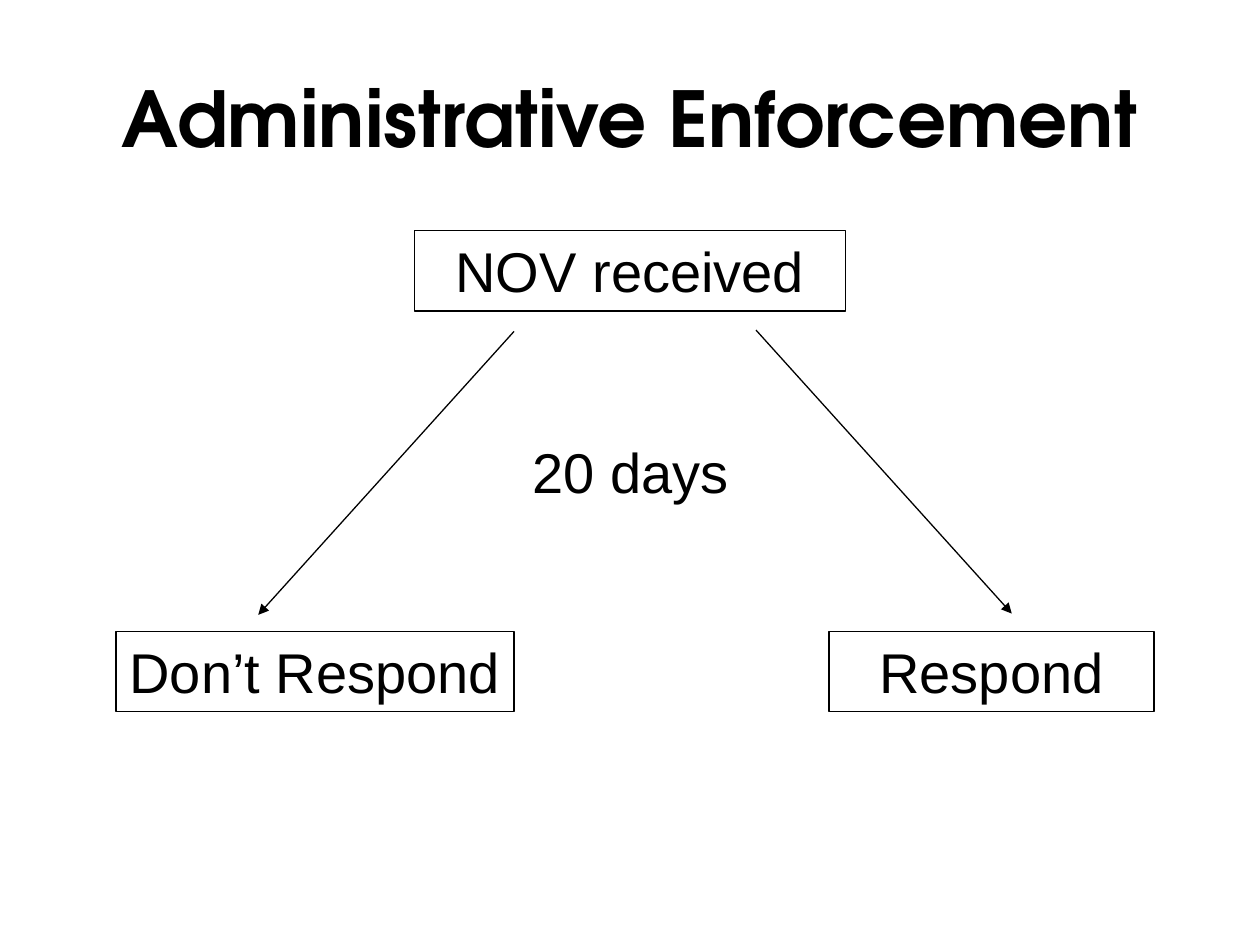
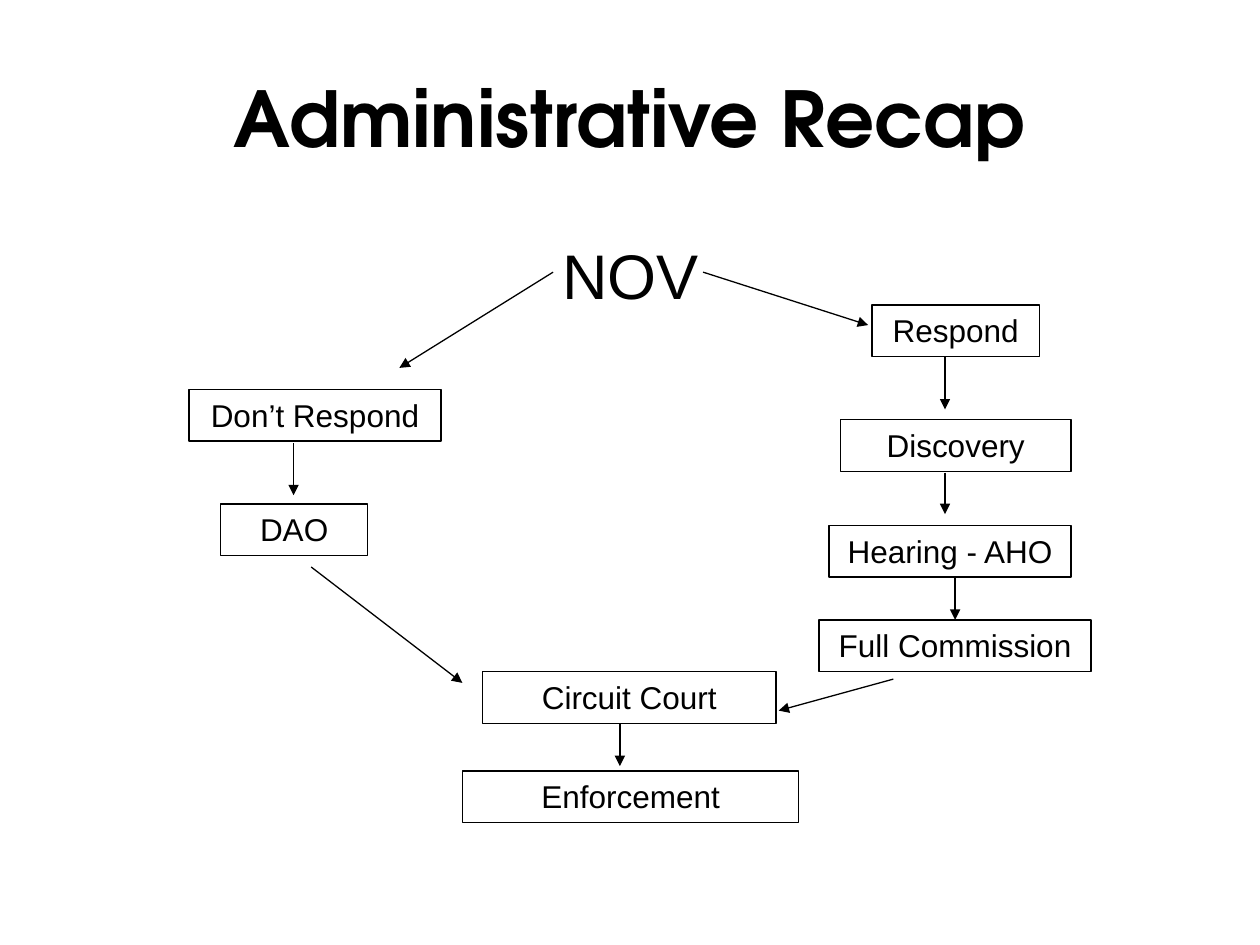
from typing import NamedTuple

from lxml.etree import SubElement
from pptx import Presentation
from pptx.dml.color import RGBColor
from pptx.enum.shapes import MSO_CONNECTOR, MSO_SHAPE
from pptx.enum.text import MSO_ANCHOR as Anchor, MSO_AUTO_SIZE as AutoSize, PP_ALIGN as Align
from pptx.oxml.ns import qn
from pptx.util import Inches, Pt

INK, PAPER = "000000", "FFFFFF"
BODY_FONT, TITLE_FONT = "Arial", "TeX Gyre Adventor"
LINE_WIDTH = 0.75
TITLE_ONLY = 5
TOP_SIDE = 0


class Box(NamedTuple):
    text: str
    left: float
    top: float
    width: float


class Arrow(NamedTuple):
    x1: float
    y1: float
    x2: float
    y2: float
    target: str = ""  # box whose top side the arrow is joined to


class BoxStyle(NamedTuple):
    size: float
    height: float


class Flow(NamedTuple):
    title: str
    style: BoxStyle
    boxes: list[Box]
    label: Box
    label_style: BoxStyle
    arrows: list[Arrow]


LARGE, SMALL = BoxStyle(32, 0.64), BoxStyle(18, 0.41)

FLOWS = [
    Flow(
        "Administrative Enforcement", LARGE,
        [
            Box("NOV received", 3.29, 1.83, 3.42),
            Box("Don’t Respond", 0.92, 5.01, 3.16),
            Box("Respond", 6.58, 5.01, 2.58),
        ],
        Box("20 days", 3.93, 3.42, 2.15), LARGE,
        [Arrow(4.08, 2.63, 2.05, 4.88), Arrow(6, 2.62, 8.03, 4.87)],
    ),
    Flow(
        "Administrative Recap", SMALL,
        [
            # No response
            Box("Don’t Respond", 1.5, 3.09, 2),
            Box("DAO", 1.75, 4, 1.17),
            # Response
            Box("Respond", 6.92, 2.42, 1.33),
            Box("Discovery", 6.67, 3.33, 1.83),
            Box("Hearing - AHO", 6.58, 4.17, 1.92),
            Box("Full Commission", 6.5, 4.92, 2.16),
            # Both branches end in court
            Box("Circuit Court", 3.83, 5.33, 2.33),
            Box("Enforcement", 3.67, 6.12, 2.67),
        ],
        Box("NOV", 4.17, 1.83, 1.67), BoxStyle(36, 0.75),
        [
            Arrow(4.39, 2.16, 3.17, 2.92),
            Arrow(5.58, 2.16, 6.89, 2.58),
            Arrow(2.33, 3.52, 2.33, 3.93),
            Arrow(2.47, 4.5, 3.67, 5.42),
            Arrow(7.5, 2.83, 7.5, 3.25),
            Arrow(7.5, 3.75, 7.5, 4.08),
            Arrow(7.58, 4.58, 7.58, 4.92, "Full Commission"),
            Arrow(7.09, 5.39, 6.18, 5.64),
            Arrow(4.92, 5.74, 4.92, 6.08),
        ],
    ),
]


def rgb(color: str) -> RGBColor:
    return RGBColor.from_string(color)


def write(shape, text: str, **font_format) -> None:
    """Put one centred line of text in a shape."""
    tf = shape.text_frame
    tf.word_wrap = True
    p = tf.paragraphs[0]
    p.alignment = Align.CENTER
    r = p.add_run()
    r.text = text
    for name, value in font_format.items():
        setattr(r.font, name, value)
    r.font.color.rgb = rgb(INK)


def style_line(line) -> None:
    line.color.rgb = rgb(INK)
    line.width = Pt(LINE_WIDTH)


def add_title(s, text: str) -> None:
    title = s.shapes.title
    place = {"left": 0.5, "top": 0.3, "width": 9, "height": 1.25}
    for name, value in place.items():
        setattr(title, name, Inches(value))
    title.text_frame.vertical_anchor = Anchor.MIDDLE
    write(title, text, name=TITLE_FONT, size=Pt(44), bold=True)


def add_box(s, box: Box, style: BoxStyle, framed: bool = True):
    area = [Inches(v) for v in (box.left, box.top, box.width, style.height)]
    if framed:
        sp = s.shapes.add_shape(MSO_SHAPE.RECTANGLE, *area)
        sp.shadow.inherit = False
        sp.fill.background()
        style_line(sp.line)
    else:
        sp = s.shapes.add_textbox(*area)
    sp.text_frame.vertical_anchor = Anchor.TOP
    write(sp, box.text, name=BODY_FONT, size=Pt(style.size))
    sp.text_frame.auto_size = AutoSize.SHAPE_TO_FIT_TEXT
    return sp


def add_arrow(s, arrow: Arrow, boxes: dict) -> None:
    ends = [Inches(v) for v in arrow[:4]]
    line = s.shapes.add_connector(MSO_CONNECTOR.STRAIGHT, *ends)
    if arrow.target:
        line.end_connect(boxes[arrow.target], TOP_SIDE)
    style_line(line.line)
    SubElement(line.line._get_or_add_ln(), qn("a:tailEnd"), type="triangle")
    SubElement(line._element.spPr, qn("a:effectLst"))


def add_flow(prs, flow: Flow) -> None:
    s = prs.slides.add_slide(prs.slide_layouts[TITLE_ONLY])
    s.background.fill.solid()
    s.background.fill.fore_color.rgb = rgb(PAPER)
    add_title(s, flow.title)
    add_box(s, flow.label, flow.label_style, framed=False)
    boxes = {box.text: add_box(s, box, flow.style) for box in flow.boxes}
    for arrow in flow.arrows:
        add_arrow(s, arrow, boxes)


def main() -> None:
    prs = Presentation()
    prs.slide_width, prs.slide_height = Inches(10), Inches(7.5)
    for flow in FLOWS:
        add_flow(prs, flow)
    prs.save("out.pptx")


if __name__ == "__main__":
    main()
